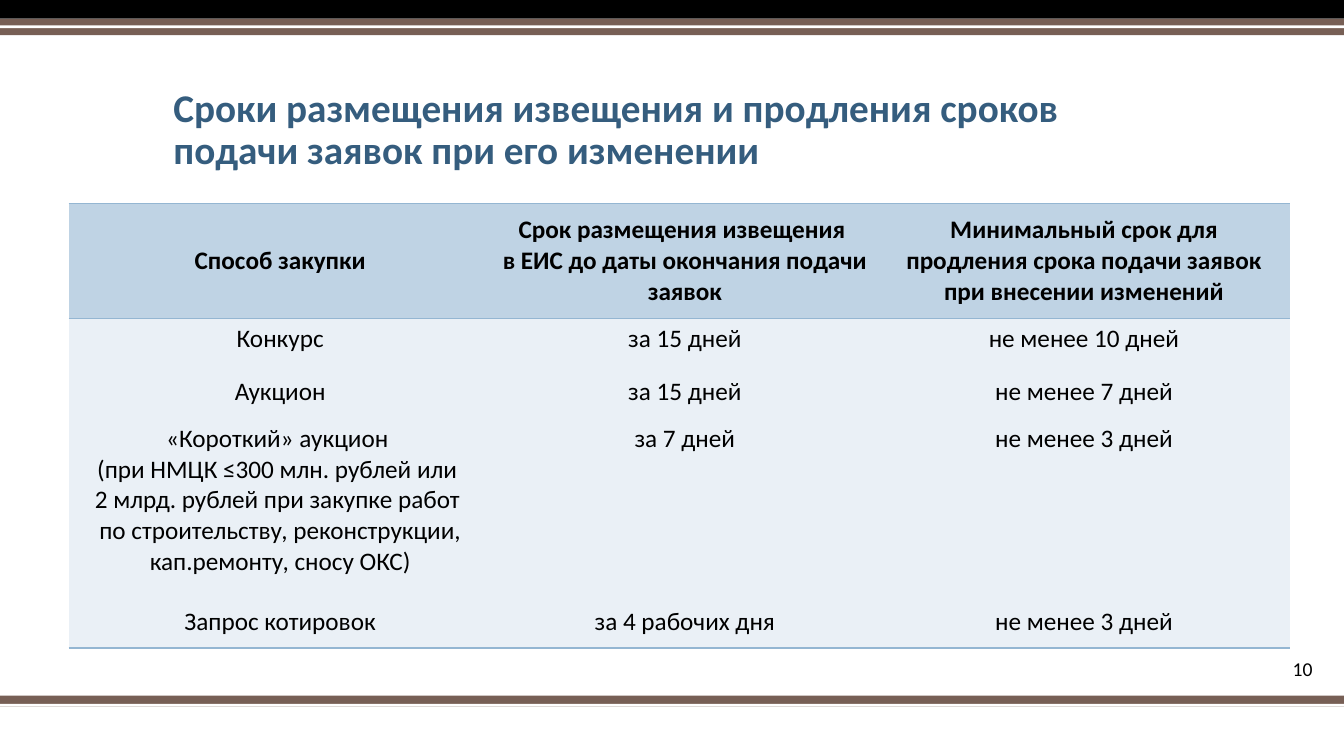
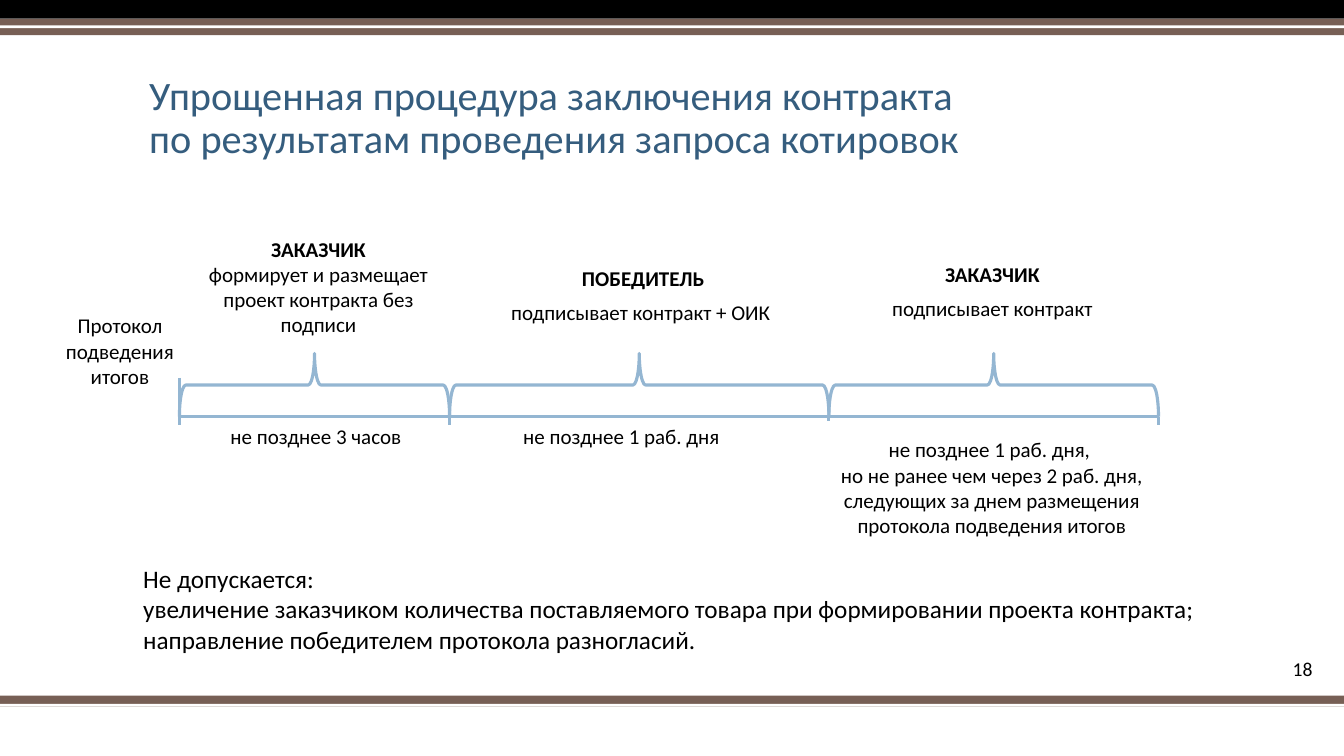
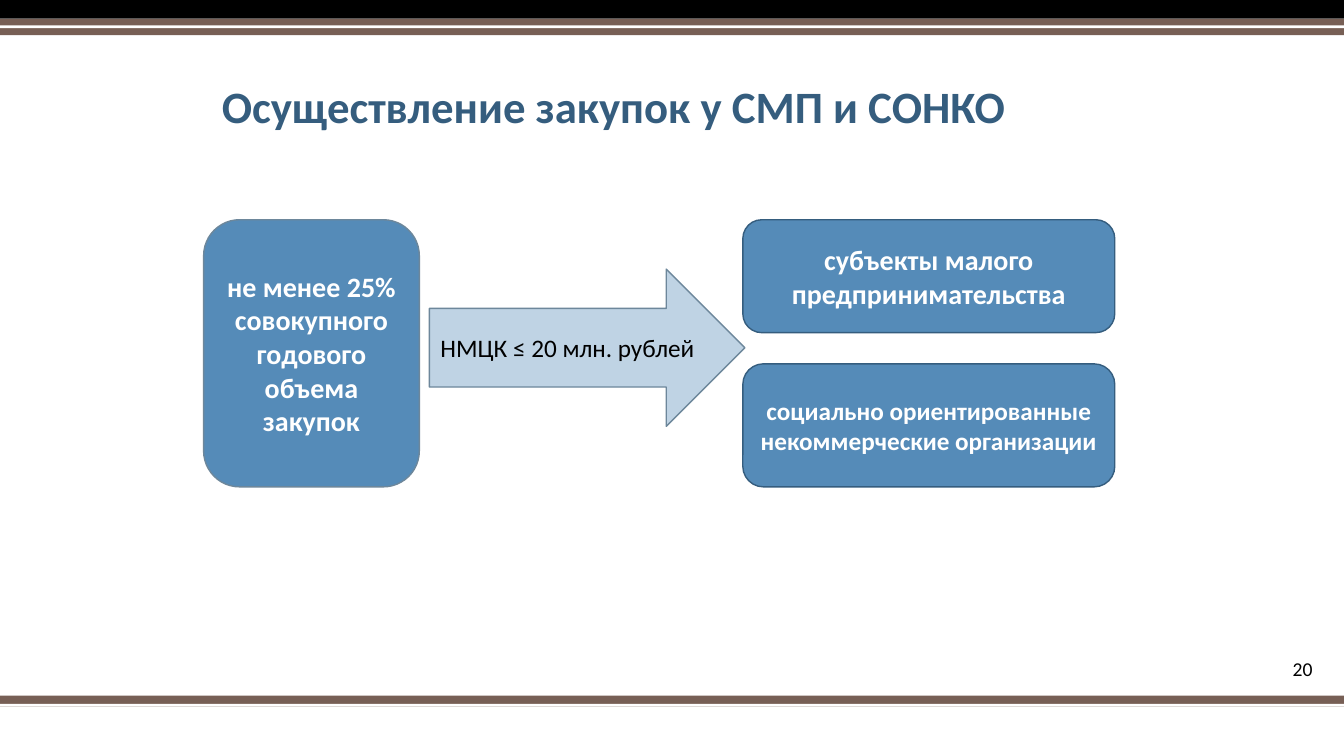
import copy
import dataclasses
import itertools

import pptx
import pptx.dml.color
import pptx.enum.shapes
import pptx.enum.text
import pptx.oxml
import pptx.oxml.ns
import pptx.util

SHAPE = pptx.enum.shapes.MSO_SHAPE
ALIGN = pptx.enum.text.PP_ALIGN
ANCHOR = pptx.enum.text.MSO_ANCHOR
NO_STYLE_TABLE = "{2D5ABB26-0587-4C30-8999-92F81FD0307C}"


def rgb(value):
    return pptx.dml.color.RGBColor.from_string(value)


def xml(tag, inner="", attrs=""):
    ns = pptx.oxml.ns.nsdecls("a")
    return pptx.oxml.parse_xml(f"<a:{tag} {ns} {attrs}>{inner}</a:{tag}>")


@dataclasses.dataclass(frozen=True)
class Theme:
    font: str = "Calibri"
    black: str = "000000"
    white: str = "FFFFFF"
    brown: str = "775F55"
    navy: str = "355D7E"
    blue: str = "558BB8"
    sky: str = "94B6D2"
    pale: str = "BFD3E4"
    faint: str = "EAF0F6"
    steel: str = "6D879B"
    page: float = 14
    note: float = 15
    body: float = 18
    box: float = 20
    title: float = 28
    title_plain: float = 28.8
    title_big: float = 32
    thin: float = 1
    thick: float = 2.25


class Deck:
    """Slides on a grid of 40 columns by 22.5 rows of square cells."""

    COLUMNS = 40

    def __init__(self, theme):
        self.t = theme
        self.prs = pptx.Presentation()
        self.prs.slide_width = pptx.util.Inches(13.333)
        self.prs.slide_height = pptx.util.Inches(7.5)
        self.s = None

    def cells(self, *values):
        """Turn grid columns or rows into lengths."""
        unit = self.prs.slide_width / self.COLUMNS
        return [pptx.util.Emu(round(v * unit)) for v in values]

    def place(self, sp, at):
        for name, value in zip(("left", "top", "width", "height"), self.cells(*at)):
            setattr(sp, name, value)

    def slide(self, title, at, number, size, bold=True, layout="Title Only"):
        first = self.s is None
        self.s = self.prs.slides.add_slide(self.prs.slide_layouts.get_by_name(layout))
        if first:
            self.master_bands()
        sp = self.s.shapes.title
        self.place(sp, at)
        self.set_text(sp.text_frame, [title], size, self.t.navy, bold,
                      ALIGN.LEFT, ANCHOR.BOTTOM, line_spacing=0.9)
        self.text([number], (36.3, 19.53, 3.06, 0.75), self.t.page, align=ALIGN.RIGHT)

    def master_bands(self):
        """Draw the bands and move them behind everything on the slide master."""
        t = self.t
        bands = [(20.7, 0.33, t.brown), (20.95, 0.08, t.white), (0, 0.56, t.black),
                 (0.56, 0.49, t.brown), (0.76, 0.08, t.white)]
        tree = self.prs.slide_master.shapes.element
        for i, (top, height, fill) in enumerate(bands):
            el = self.shape(SHAPE.RECTANGLE, (0, top, self.COLUMNS, height), fill).element
            el.xpath(".//p:cNvPr")[0].set("id", str(100 + i))
            tree.insert(2 + i, el)

    def set_text(self, tf, lines, size, color=None, bold=False, align=ALIGN.CENTER,
                 anchor=ANCHOR.MIDDLE, **spacing):
        """Fill a text frame or cell text; a line is a text or a (text, bold) pair."""
        tf.word_wrap = True
        tf.auto_size = pptx.enum.text.MSO_AUTO_SIZE.NONE
        tf.vertical_anchor = anchor
        for i, line in enumerate(lines):
            text, strong = line if isinstance(line, tuple) else (line, bold)
            p = tf.paragraphs[0] if i == 0 else tf.add_paragraph()
            p.text = text
            p.alignment = align
            space = {"space_before": pptx.util.Pt(0), **spacing}
            if i == 0:
                space["space_before"] = pptx.util.Pt(0)
            for name, value in space.items():
                setattr(p, name, value)
            font = {"name": self.t.font, "size": pptx.util.Pt(size), "bold": strong}
            for r in p.runs:
                for name, value in font.items():
                    setattr(r.font, name, value)
                r.font.color.rgb = rgb(color or self.t.black)
            for br in p._p.xpath("a:br"):
                br.append(copy.deepcopy(p._p.xpath("a:r/a:rPr")[0]))

    def text(self, lines, at, size, **style):
        sp = self.s.shapes.add_textbox(*self.cells(*at))
        self.set_text(sp.text_frame, lines, size, **style)

    def body(self, lines, at):
        """Put unbulleted lines in the body placeholder."""
        sp = self.s.placeholders[1]
        self.place(sp, at)
        tf = sp.text_frame
        tf.margin_left = pptx.util.Inches(0.04)
        self.set_text(tf, lines, self.t.body, align=ALIGN.LEFT, anchor=ANCHOR.TOP)
        for p in tf.paragraphs:
            pPr = p._p.get_or_add_pPr()
            pPr.set("marL", "0")
            pPr.set("indent", "0")
            pPr.append(xml("buNone"))

    def shape(self, kind, at, fill=None, line=None, width=1):
        sp = self.s.shapes.add_shape(kind, *self.cells(*at))
        sp.shadow.inherit = False
        if fill:
            sp.fill.solid()
            sp.fill.fore_color.rgb = rgb(fill)
        else:
            sp.fill.background()
        if line:
            sp.line.color.rgb = rgb(line)
            sp.line.width = pptx.util.Pt(width)
        else:
            sp.line.fill.background()
        return sp

    def box(self, kind, text, at, size, fill, line, color, bold=True):
        sp = self.shape(kind, at, fill, line, self.t.thin)
        self.set_text(sp.text_frame, [text], size, color, bold)

    def brace(self, left, right, top, height):
        """Draw a brace that spans left to right and points up."""
        span = right - left
        at = ((left + right - height) / 2, top + (height - span) / 2, height, span)
        sp = self.shape(SHAPE.LEFT_BRACE, at, None, self.t.sky, self.t.thick)
        sp.rotation = 90
        sp.adjustments[0], sp.adjustments[1] = 0.1, 0.5

    def line(self, x1, y1, x2, y2):
        c = self.s.shapes.add_connector(pptx.enum.shapes.MSO_CONNECTOR.STRAIGHT,
                                        *self.cells(x1, y1, x2, y2))
        c.line.color.rgb = rgb(self.t.sky)
        c.line.width = pptx.util.Pt(self.t.thick)
        c.element.spPr.append(xml("effectLst"))

    def table(self, data, at, widths, heights):
        t = self.t
        size = self.cells(*at, sum(widths), sum(heights))
        table = self.s.shapes.add_table(len(heights), len(widths), *size).table
        table.first_row = table.horz_banding = False
        table._tbl.xpath("a:tblPr/a:tableStyleId")[0].text = NO_STYLE_TABLE
        for col, width in zip(table.columns, self.cells(*widths)):
            col.width = width
        for row, height in zip(table.rows, self.cells(*heights)):
            row.height = height
        last = len(heights) - 1
        for i, j in itertools.product(range(len(heights)), range(len(widths))):
            cell, head = table.cell(i, j), i == 0
            self.set_text(cell.text_frame, [data[i][j]], t.body, bold=head)
            cell.vertical_anchor = ANCHOR.MIDDLE if head else ANCHOR.TOP
            cell.fill.solid()
            cell.fill.fore_color.rgb = rgb(t.pale if head else t.faint)
            edges = ["lnT", "lnB"] if head else ["lnB"] if i == last else []
            for k, edge in enumerate(edges):
                stroke = f'<a:solidFill><a:srgbClr val="{t.sky}"/></a:solidFill>'
                ln = xml(edge, stroke, f'w="{pptx.util.Pt(t.thin)}"')
                cell._tc.get_or_add_tcPr().insert(k, ln)


def notice_terms(d):
    d.slide("Сроки размещения извещения и продления сроков подачи заявок при его изменении",
            (4.86, 1.8, 30, 3.51), "10", d.t.title)
    data = [
        ("Способ закупки",
         "Срок размещения извещения \nв ЕИС до даты окончания подачи заявок",
         "Минимальный срок для продления срока подачи заявок при внесении изменений"),
        ("Конкурс", "за 15 дней", "не менее 10 дней"),
        ("Аукцион", "за 15 дней", "не менее 7 дней"),
        ("«Короткий» аукцион \n(при НМЦК ≤300 млн. рублей или \n"
         "2 млрд. рублей при закупке работ \n"
         "по строительству, реконструкции, кап.ремонту, сносу ОКС)",
         "за 7 дней", "не менее 3 дней"),
        ("Запрос котировок", "за 4 рабочих дня", "не менее 3 дней"),
    ]
    d.table(data, (2.04, 6.06), (12.6, 11.49, 12.27), (3.42, 1.59, 1.38, 5.46, 1.38))


def contract_timeline(d):
    d.slide("Упрощенная процедура заключения контракта \n"
            "по результатам проведения запроса котировок",
            (4.14, 2.94, 30, 2.04), "18", d.t.title_plain, False, "Title and Content")
    edges, axis = (5.34, 13.38, 24.67, 34.48), 12.4
    d.line(edges[0], axis, edges[-1], axis)
    for x, top, bottom in zip(edges, (11.25, 11.97, axis, axis),
                              (12.66, 12.66, 12.54, 12.66)):
        d.line(x, top, x, bottom)
    for left, right in itertools.pairwise(edges):
        d.brace(left, right, 10.52, 1.88)
    gap = {"space_before": pptx.util.Pt(6)}
    labels = [
        ([("ЗАКАЗЧИК", True), "формирует и размещает проект контракта без подписи"],
         (5.82, 6.87, 7.32, 3.33), {}),
        ([("ПОБЕДИТЕЛЬ", True), "подписывает контракт + ОИК "],
         (13.86, 7.74, 10.56, 2.07), gap),
        ([("ЗАКАЗЧИК", True), "подписывает контракт"], (25.47, 7.62, 8.13, 2.07), gap),
        (["Протокол подведения итогов"], (1.56, 9.15, 4.02, 2.58), {}),
        (["не позднее 3 часов"], (5.46, 12.45, 7.89, 1.05), {}),
        (["не позднее 1 раб. дня"], (14.55, 12.45, 7.89, 1.05), {}),
        (["не позднее 1 раб. дня, ",
          "но не ранее чем через 2 раб. дня, следующих за днем размещения "
          "протокола подведения итогов"], (24.63, 12.84, 9.78, 3.33), {}),
    ]
    for lines, at, spacing in labels:
        d.text(lines, at, d.t.note, **spacing)
    d.body(["Не допускается:",
            "увеличение заказчиком количества поставляемого товара "
            "при формировании проекта контракта;",
            "направление победителем протокола разногласий."],
           (4.14, 16.62, 33.54, 3.03))


def small_business(d):
    t = d.t
    d.slide("Осуществление закупок у СМП и СОНКО",
            (6.3, 2.07, 28.23, 2.04), "20", t.title_big)
    rounded = SHAPE.ROUNDED_RECTANGLE
    d.box(rounded, "субъекты малого предпринимательства",
          (22.11, 6.54, 11.07, 3.36), t.box, t.blue, t.navy, t.white)
    d.box(rounded, "социально ориентированные некоммерческие организации",
          (22.11, 10.83, 11.07, 3.66), t.body, t.blue, t.navy, t.white)
    d.box(rounded, "не менее 25% совокупного годового объема закупок",
          (6.06, 6.54, 6.42, 7.95), t.box, t.blue, t.steel, t.white)
    d.box(SHAPE.RIGHT_ARROW, "НМЦК ≤ 20 млн. рублей",
          (12.78, 8.01, 9.39, 4.68), t.body, t.pale, t.steel, t.black, False)


def main():
    d = Deck(Theme())
    for build in (notice_terms, contract_timeline, small_business):
        build(d)
    d.prs.save("out.pptx")


if __name__ == "__main__":
    main()
